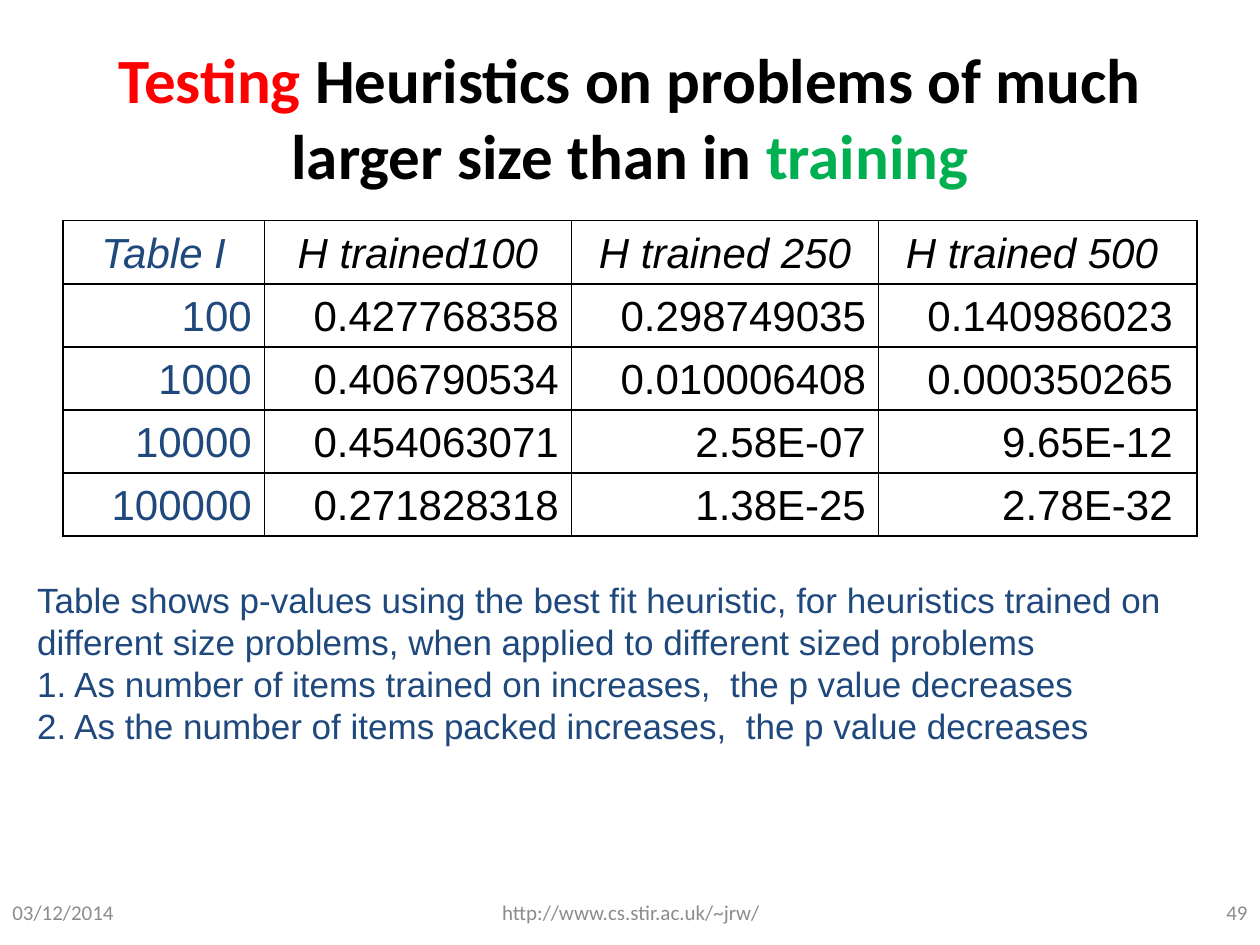
"""Build a slide with a table of p-values for heuristics tested on larger problems."""
from dataclasses import dataclass

from lxml.etree import SubElement
from pptx import Presentation
from pptx.dml.color import RGBColor
from pptx.enum.text import MSO_ANCHOR, PP_ALIGN
from pptx.oxml import parse_xml
from pptx.oxml.ns import nsdecls
from pptx.util import Cm, Pt


@dataclass(frozen=True)
class Theme:
    black: str = "000000"
    red: str = "FF0000"
    green: str = "00B050"
    navy: str = "1F497D"
    grey: str = "8C8C8C"
    heading_font: str = "Calibri"
    body_font: str = "Arial"
    title_size: int = 36
    table_size: int = 24
    note_size: int = 20
    footer_size: int = 12


theme = Theme()


def add_run(paragraph, text, font, size, color, bold=False, italic=False):
    run = paragraph.add_run()
    run.text = text
    run.font.name = font
    run.font.size = Pt(size)
    run.font.bold = bold
    run.font.italic = italic
    run.font.color.rgb = RGBColor.from_string(color)


def hang_indent(paragraph):
    properties = paragraph._p.get_or_add_pPr()
    properties.set("marL", str(Cm(0.95)))
    properties.set("indent", str(-Cm(0.95)))


presentation = Presentation()
presentation.slide_width = Cm(25.4)
presentation.slide_height = Cm(19.05)
slide = presentation.slides.add_slide(presentation.slide_layouts[5])

footers = [
    ("03/12/2014", 0, 5.93, PP_ALIGN.LEFT),
    ("http://www.cs.stir.ac.uk/~jrw/", 8.7, 8.04, PP_ALIGN.CENTER),
    ("49", 19.47, 5.93, PP_ALIGN.RIGHT),
]
for text, left, width, alignment in footers:
    footer = slide.shapes.add_textbox(Cm(left), Cm(17.73), Cm(width), Cm(1.32))
    footer.text_frame.word_wrap = True
    footer.text_frame.vertical_anchor = MSO_ANCHOR.MIDDLE
    paragraph = footer.text_frame.paragraphs[0]
    paragraph.alignment = alignment
    add_run(paragraph, text, theme.heading_font, theme.footer_size, theme.grey)

title = slide.shapes.title
title.left, title.top, title.width, title.height = Cm(1.27), Cm(0.76), Cm(22.86), Cm(3.18)
title.text_frame.vertical_anchor = MSO_ANCHOR.MIDDLE
paragraph = title.text_frame.paragraphs[0]
paragraph.alignment = PP_ALIGN.CENTER
title_parts = [
    ("Testing", theme.red),
    (" Heuristics on problems of much larger size than in ", theme.black),
    ("training", theme.green),
]
for text, color in title_parts:
    add_run(paragraph, text, theme.heading_font, theme.title_size, color, bold=True)

rows = [
    ["Table I", "H trained100", "H trained 250", "H trained 500 "],
    ["100", "0.427768358", "0.298749035", "0.140986023 "],
    ["1000", "0.406790534", "0.010006408", "0.000350265 "],
    ["10000", "0.454063071", "2.58E-07", "9.65E-12 "],
    ["100000", "0.271828318", "1.38E-25", "2.78E-32 "],
]
column_widths = [4.06, 6.19, 6.19, 6.42]
row_heights = [1.27, 1.21, 1.24, 1.21, 1.21]
table = slide.shapes.add_table(
    len(rows), len(column_widths), Cm(1.27), Cm(4.45),
    Cm(sum(column_widths)), Cm(sum(row_heights)),
).table
table.first_row = False
table.horz_banding = False
for column, width in zip(table.columns, column_widths):
    column.width = Cm(width)
for row, height in zip(table.rows, row_heights):
    row.height = Cm(height)

for row_index, values in enumerate(rows):
    is_header = row_index == 0
    for column_index, text in enumerate(values):
        cell = table.cell(row_index, column_index)
        cell.fill.background()
        cell.vertical_anchor = MSO_ANCHOR.BOTTOM
        cell_properties = cell._tc.get_or_add_tcPr()
        for position, side in enumerate(["lnL", "lnR", "lnT", "lnB"]):
            border = parse_xml(
                f'<a:{side} {nsdecls("a")} w="{Pt(1)}"><a:solidFill>'
                f'<a:srgbClr val="{theme.black}"/></a:solidFill></a:{side}>'
            )
            cell_properties.insert(position, border)
        paragraph = cell.text_frame.paragraphs[0]
        paragraph.alignment = PP_ALIGN.CENTER if is_header else PP_ALIGN.RIGHT
        hang_indent(paragraph)
        color = theme.navy if column_index == 0 else theme.black
        add_run(paragraph, text, theme.body_font, theme.table_size, color, italic=is_header)

notes = [
    "Table shows p-values using the best fit heuristic, for heuristics trained on",
    "different size problems, when applied to different sized problems",
    "1. As number of items trained on increases,  the p value decreases",
    "2. As the number of items packed increases,  the p value decreases",
]
explanation = slide.shapes.add_textbox(Cm(0.5), Cm(11.53), Cm(24.74), Cm(3.68))
explanation.text_frame.word_wrap = True
for index, text in enumerate(notes):
    frame = explanation.text_frame
    paragraph = frame.add_paragraph() if index else frame.paragraphs[0]
    hang_indent(paragraph)
    add_run(paragraph, text, theme.body_font, theme.note_size, theme.navy)

presentation.save("out.pptx")
